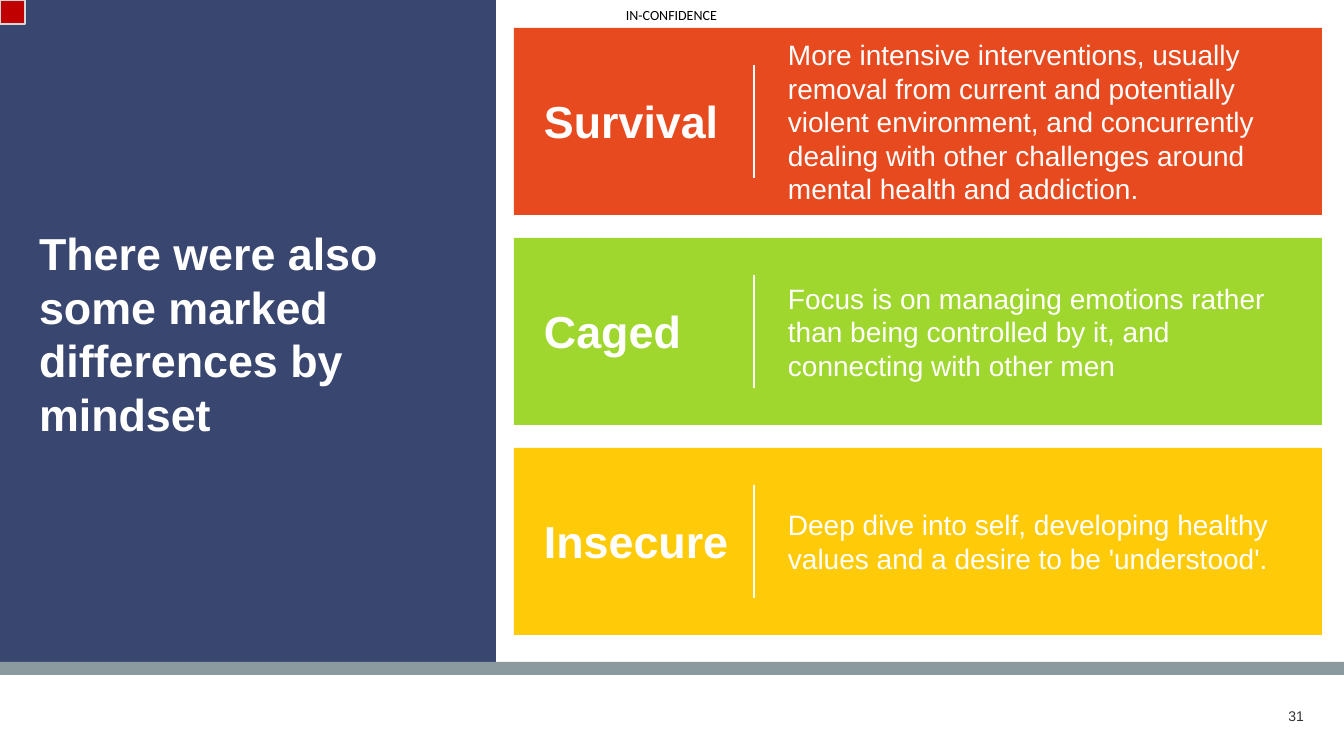
from lxml.etree import SubElement
from pptx import Presentation
from pptx.dml.color import RGBColor
from pptx.enum.shapes import MSO_CONNECTOR as Connector, MSO_SHAPE as Shape
from pptx.enum.text import MSO_ANCHOR as Anchor, PP_ALIGN as Align
from pptx.oxml.ns import qn
from pptx.util import Emu, Pt

# Content (the texts hold non-breaking spaces that steer the wrapping)
TITLE = "There were also some marked differences by mindset"
MARKING = "IN-CONFIDENCE"
PAGE_NUMBER = "31"
MINDSETS = [
    ("Survival", "E84A20",
     "More intensive interventions, usually removal from current and potentially violent "
     "environment, and concurrently dealing with other challenges around mental health "
     "and addiction."),
    ("Caged", "A0D72F",
     "Focus is on managing emotions rather than being controlled by it, and connecting "
     "with other men"),
    ("Insecure", "FFCA08",
     "Deep dive into self, developing healthy values and a desire to be 'understood'."),
]
WHITE = "FFFFFF"

# Layout in px
SLIDE_WIDTH, SLIDE_HEIGHT = 1344, 756
CARD_LEFT, CARD_TOP, CARD_WIDTH, CARD_HEIGHT, CARD_PITCH = 514, 28, 808, 187, 210
CARD_INSETS = (274, 5, 10, 5)
LABEL_INSETS = (10, 5, 10, 5)
DIVIDER_X, DIVIDER_HEIGHT = 754, 113


def px(length):
    return Emu(round(length * 914400 / 100.8))


def color(hex_string):
    return RGBColor.from_string(hex_string)


def write(shape, text, size, text_color=WHITE, font="Arial", bold=False, wrap=True,
          align=Align.LEFT, anchor=Anchor.MIDDLE, insets=(0, 0, 0, 0)):
    frame = shape.text_frame
    frame.text = text
    frame.word_wrap = wrap
    frame.vertical_anchor = anchor
    frame.margin_left, frame.margin_top, frame.margin_right, frame.margin_bottom = map(px, insets)
    paragraph = frame.paragraphs[0]
    paragraph.alignment = align
    run_font = paragraph.runs[0].font
    run_font.name, run_font.size, run_font.bold = font, Pt(size), bold
    run_font.color.rgb = color(text_color)


def add_text(slide, box, text, size, **style):
    write(slide.shapes.add_textbox(*map(px, box)), text, size, **style)


def add_rectangle(slide, box, fill, line=None):
    shape = slide.shapes.add_shape(Shape.RECTANGLE, *map(px, box))
    shape.shadow.inherit = False
    shape.fill.solid()
    shape.fill.fore_color.rgb = color(fill)
    if line:
        shape.line.color.rgb = color(line)
        shape.line.width = Pt(1)
    else:
        shape.line.fill.background()
    return shape


def add_divider(slide, x, top, height):
    divider = slide.shapes.add_connector(
        Connector.STRAIGHT, px(x), px(top), px(x), px(top + height))
    divider.line.color.rgb = color(WHITE)
    divider.line.width = Pt(1)
    SubElement(divider._element.spPr, qn("a:effectLst"))


def main():
    presentation = Presentation()
    presentation.slide_width, presentation.slide_height = px(SLIDE_WIDTH), px(SLIDE_HEIGHT)
    slide = presentation.slides.add_slide(presentation.slide_layouts[6])

    # Frame: page number, marking, side panel and footer band
    add_text(slide, (1266, 705, 38, 21), PAGE_NUMBER, 10, text_color="333333", align=Align.RIGHT)
    add_text(slide, (626, 7, 95, 17), MARKING, 10, text_color="000000", font="Calibri",
             wrap=False, anchor=Anchor.TOP)
    add_rectangle(slide, (0, 0, 496, 666), "39466F")
    add_rectangle(slide, (0, 662, SLIDE_WIDTH, 13), "8B9A9F")
    add_text(slide, (39, 311, 416, 44), TITLE, 32, bold=True)

    # One card per mindset
    for index, (name, fill, description) in enumerate(MINDSETS):
        top = CARD_TOP + index * CARD_PITCH
        card = add_rectangle(slide, (CARD_LEFT, top, CARD_WIDTH, CARD_HEIGHT), fill)
        write(card, description, 20, insets=CARD_INSETS)
        add_text(slide, (CARD_LEFT + 20, top + 61, 217, 65), name, 32, bold=True,
                 anchor=Anchor.TOP, insets=LABEL_INSETS)
        add_divider(slide, DIVIDER_X, top + (CARD_HEIGHT - DIVIDER_HEIGHT) / 2, DIVIDER_HEIGHT)

    # Corner marker
    add_rectangle(slide, (0, 0, 25, 24), "C00000", line="D6D6D6")

    presentation.save("out.pptx")


if __name__ == "__main__":
    main()
